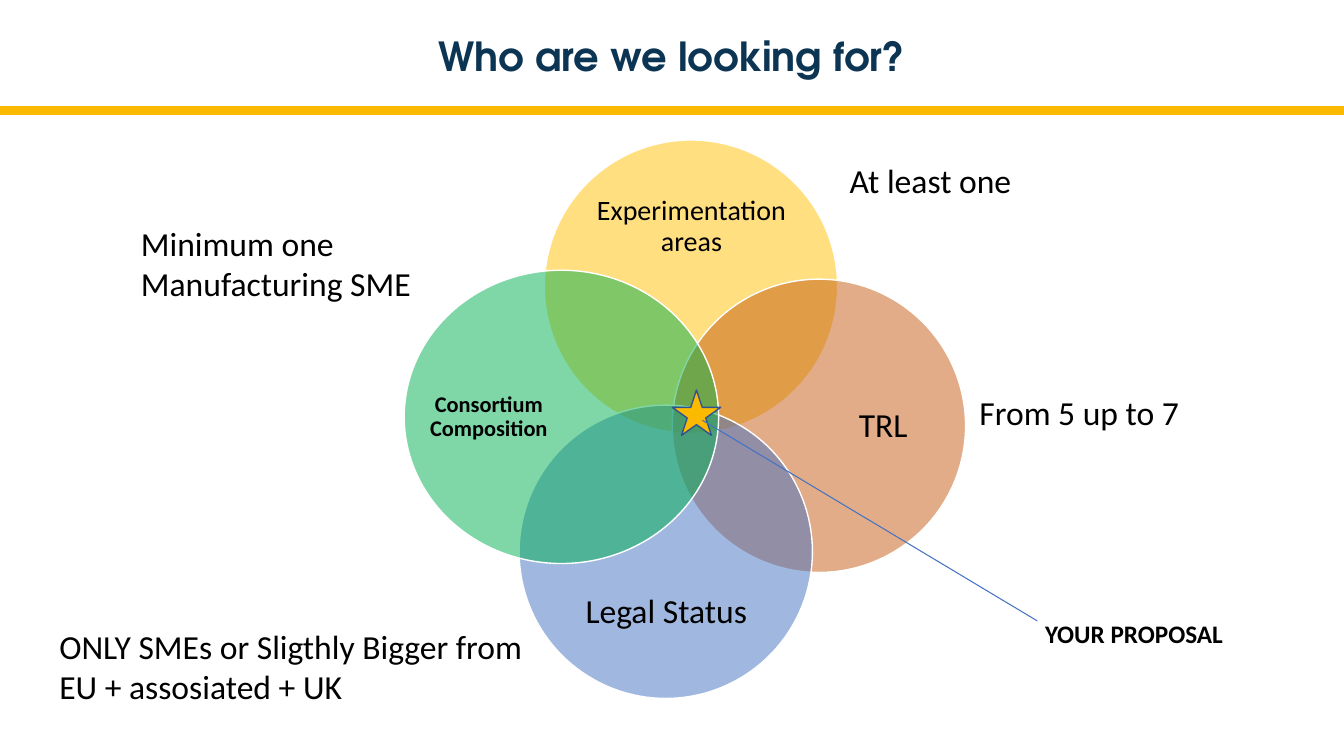
from lxml.etree import SubElement
from pptx import Presentation
from pptx.dml.color import RGBColor
from pptx.enum.shapes import MSO_CONNECTOR, MSO_SHAPE
from pptx.enum.text import MSO_ANCHOR, PP_ALIGN
from pptx.oxml.ns import qn
from pptx.util import Pt

# Text formats
BODY = {"name": "Calibri", "size": Pt(24), "bold": False}
AREA = {**BODY, "size": Pt(20)}
CONSORTIUM = {**BODY, "size": Pt(16), "bold": True}
PROPOSAL = {**BODY, "size": Pt(18), "bold": True}
TITLE = {"name": "TeX Gyre Adventor", "size": Pt(28.6), "bold": True}

# Circles: left, top, width, height, colour
CIRCLES = [
    ((388.8, 100, 209.5, 209.5), "FFC000"),
    ((480.2, 199.4, 209.5, 209.5), "C55A11"),
    ((370.8, 289.4, 209.5, 209.5), "4372C3"),
    ((288.7, 193, 224.6, 209.5), "00B050"),
]

# Labels inside the circles: text, box, format
LABELS = [
    ("Experimentation areas", (413.3, 128.9, 161.3, 66.2), AREA),
    ("TRL ", (593.3, 223.9, 80.6, 161.3), BODY),
    ("Legal Status", (395.3, 404.6, 161.3, 66.2), BODY),
    ("Consortium Composition", (306, 217.4, 86.4, 161.3), CONSORTIUM),
]

# Requirements around the circles: text, box, format
NOTES = [
    ("Minimum one Manufacturing SME", (93.6, 155.5, 254.2, 65.5), BODY),
    ("From 5 up to 7", (692.6, 276.5, 227.5, 36), BODY),
    ("ONLY SMEs or Sligthly Bigger from EU + assosiated + UK",
     (35.3, 443.5, 360, 65.5), BODY),
    ("At least one", (599.8, 110.9, 227.5, 36), BODY),
    ("YOUR PROPOSAL", (739.4, 437.8, 177.8, 28.8), PROPOSAL),
]


def color(hex_code):
    return RGBColor.from_string(hex_code)


def points(values):
    return [Pt(value) for value in values]


def add_filled_shape(slide, kind, box, fill, outline, opacity=100):
    shape = slide.shapes.add_shape(kind, *points(box))
    shape.shadow.inherit = False
    shape.fill.solid()
    shape.fill.fore_color.rgb = color(fill)
    shape.line.color.rgb = color(outline)
    shape.line.width = Pt(1)
    if opacity < 100:
        fill_color = shape.fill._xPr.find(qn("a:solidFill"))[0]
        SubElement(fill_color, qn("a:alpha")).set("val", str(opacity * 1000))


def add_line(slide, start, end, line_color, width):
    connector = slide.shapes.add_connector(
        MSO_CONNECTOR.STRAIGHT, *points(start + end))
    connector.line.color.rgb = color(line_color)
    connector.line.width = Pt(width)
    SubElement(connector._element.spPr, qn("a:effectLst"))


def add_text(slide, text, box, font_format, font_color="000000",
             align=PP_ALIGN.LEFT, anchor=MSO_ANCHOR.TOP,
             insets=(7.2, 3.6), spacing=1.0):
    frame = slide.shapes.add_textbox(*points(box)).text_frame
    horizontal, vertical = points(insets)
    frame_format = {
        "word_wrap": True, "vertical_anchor": anchor,
        "margin_left": horizontal, "margin_right": horizontal,
        "margin_top": vertical, "margin_bottom": vertical,
    }
    for name, value in frame_format.items():
        setattr(frame, name, value)
    paragraph = frame.paragraphs[0]
    paragraph.text = text
    paragraph.alignment = align
    paragraph.line_spacing = spacing
    font = paragraph.runs[0].font
    for name, value in font_format.items():
        setattr(font, name, value)
    font.color.rgb = color(font_color)


def main():
    presentation = Presentation()
    presentation.slide_width = Pt(960)
    presentation.slide_height = Pt(540)
    slide = presentation.slides.add_slide(presentation.slide_layouts[6])

    # Title and rule
    add_line(slide, (0, 79.2), (960, 79.2), "FBBA00", 6.5)
    add_text(slide, "Who are we looking for?", (236.9, 19.4, 486, 59), TITLE,
             "0C3554", PP_ALIGN.CENTER, insets=(2.9, 2.9))

    # Overlapping circles with their labels
    for (box, fill), (text, label_box, font_format) in zip(CIRCLES, LABELS):
        add_filled_shape(slide, MSO_SHAPE.OVAL, box, fill, "FFFFFF", 50)
        add_text(slide, text, label_box, font_format, align=PP_ALIGN.CENTER,
                 anchor=MSO_ANCHOR.MIDDLE, insets=(0, 0), spacing=0.9)

    # Star at the shared centre and its pointer
    add_filled_shape(slide, MSO_SHAPE.STAR_5_POINT,
                     (480.2, 278.6, 34.6, 32.4), "FBBA00", "31538F")
    add_line(slide, (501.8, 300.2), (740.9, 443.5), "4472C4", 0.75)

    # Requirements
    for text, box, font_format in NOTES:
        add_text(slide, text, box, font_format)

    presentation.save("out.pptx")


if __name__ == "__main__":
    main()
